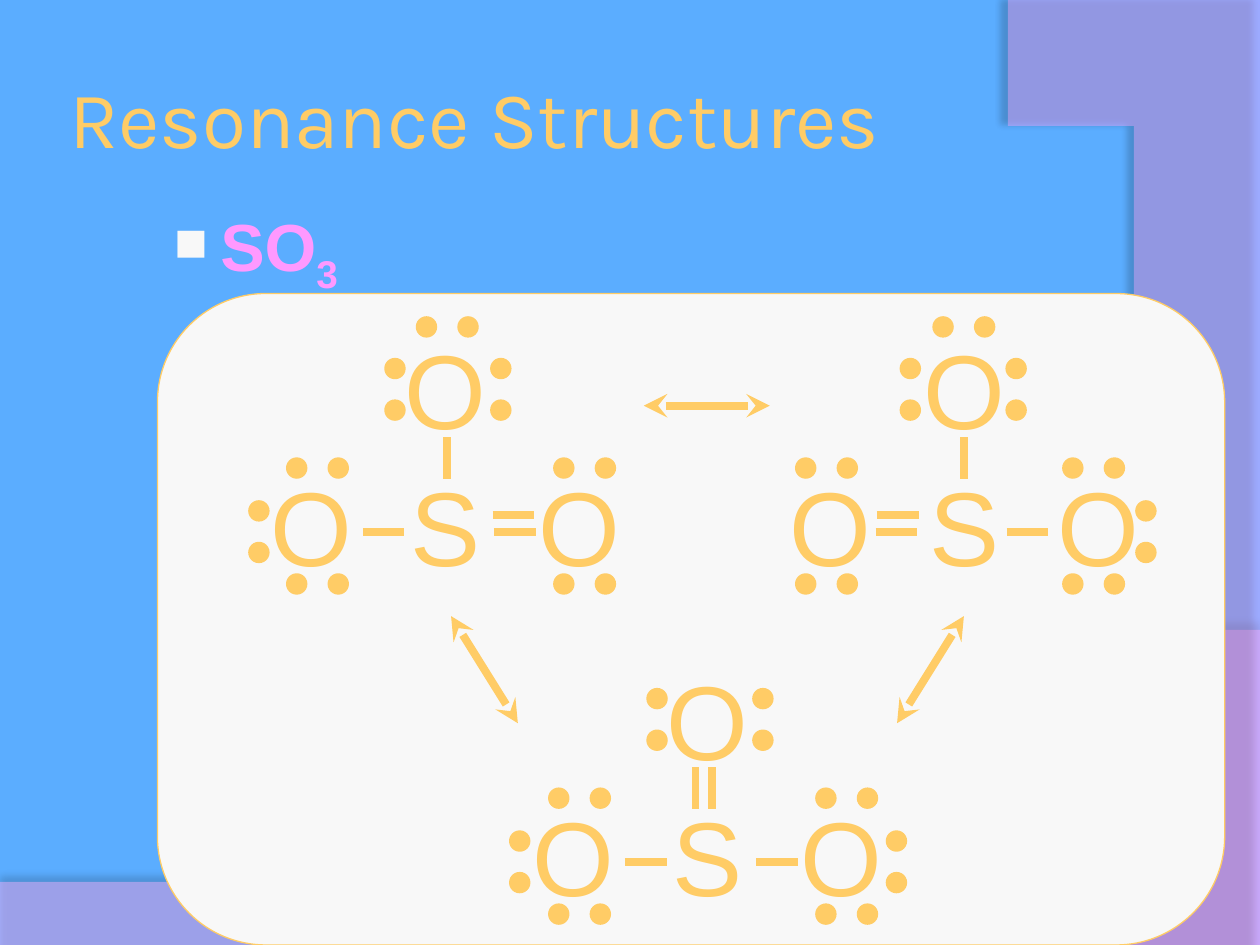
from lxml import etree
from pptx import Presentation
from pptx.dml.color import RGBColor
from pptx.enum.dml import MSO_FILL
from pptx.enum.shapes import MSO_CONNECTOR, MSO_SHAPE
from pptx.enum.text import MSO_ANCHOR, MSO_AUTO_SIZE, PP_ALIGN
from pptx.oxml.ns import qn
from pptx.util import Inches, Pt

LINE = MSO_CONNECTOR.STRAIGHT
DOT = MSO_SHAPE.OVAL
PANEL = MSO_SHAPE.FLOWCHART_ALTERNATE_PROCESS
COLORS = {"sky": "5BADFF", "gold": "FFCC66", "panel": "F8F8F8", "pink": "FF99FF",
          "wave": "FFB4FF", "arc": "FFA7FF", "shade": "000000"}
SIZE = 0.17   # dot diameter
GAP = 0.33    # step between paired dots, and bond length
SPAN = 3.54   # width over which a molecule is mirrored


def rgb(name):
    return RGBColor.from_string(COLORS[name])


def sub(node, tag, **attrs):
    return etree.SubElement(node, qn(tag), attrs)


def paint(shape, name):
    shape.shadow.inherit = False
    shape.fill.solid()
    shape.fill.fore_color.rgb = rgb(name)
    shape.line.fill.background()


def curve(a, b, c, d, steps=48):
    """Return points on a cubic Bezier curve, leaving out its start."""
    points = []
    for i in range(1, steps + 1):
        t = i / steps
        u = 1 - t
        points.append(tuple(u**3 * p + 3 * u * u * t * q + 3 * u * t * t * r + t**3 * s
                            for p, q, r, s in zip(a, b, c, d)))
    return points


def veil(slide, points, name, alpha, shade, dist, angle):
    """Draw a translucent outline with a soft shadow."""
    form = slide.shapes.build_freeform(*points[0], scale=Inches(1))
    form.add_line_segments(points[1:], close=True)
    shape = form.convert_to_shape()
    paint(shape, name)
    props = shape._element.spPr
    sub(props.find(".//" + qn("a:srgbClr")), "a:alpha", val=str(alpha * 1000))
    glow = sub(props.find(qn("a:effectLst")), "a:outerShdw", blurRad=str(Pt(4)),
               dist=str(Pt(dist)), dir=str(angle * 60000), algn="ctr", rotWithShape="0")
    tint = sub(glow, "a:srgbClr", val=COLORS["shade"])
    sub(tint, "a:alpha", val=str(shade * 1000))


def backdrop(slide):
    fill = slide.background.fill
    fill.solid()
    fill.fore_color.rgb = rgb("sky")
    wave = [(0, 7.05), (0, 7.51), (10, 7.51), (10, 5.2)]
    wave += curve((10, 5.2), (5.59, 7.29), (3.91, 7.19), (0, 7.05))
    veil(slide, wave, "wave", 45, 35, 3.5, 270)
    arc = [(10, 0.02), (10, 7.5), (8.21, 7.5)]
    arc += curve((8.21, 7.5), (9.35, 6.19), (10.18, 3), (8, 0))
    veil(slide, arc, "arc", 40, 45, 4, 180)


def label(shapes, box):
    frame = shapes.add_textbox(*map(Inches, box)).text_frame
    frame.word_wrap = True
    return frame


def style(para, face, size, name):
    para.font.name = face
    para.font.size = Pt(size)
    para.font.color.rgb = rgb(name)


def title(slide, box):
    frame = label(slide.shapes, box)
    frame.vertical_anchor = MSO_ANCHOR.MIDDLE
    frame.margin_left = frame.margin_right = Inches(0.05)
    para = frame.paragraphs[0]
    para.text = "Resonance Structures"
    style(para, "Karla", 46, "gold")


def formula(slide, box):
    para = label(slide.shapes, box).paragraphs[0]
    para.add_run().text = "SO"
    low = para.add_run()
    low.text = "3"
    low.font._element.set("baseline", "-25000")
    style(para, "Arial", 38, "pink")
    para.font.bold = True
    para.space_before = Pt(8)
    props = para._p.get_or_add_pPr()
    props.set("marL", str(Inches(0.37)))
    props.set("indent", str(-Inches(0.37)))
    mark = [etree.Element(qn("a:" + tag)) for tag in ("buClr", "buSzPct", "buChar")]
    sub(mark[0], "a:srgbClr", val=COLORS["panel"])
    mark[1].set("val", "70000")
    mark[2].set("char", "■")
    spot = list(props).index(props.find(qn("a:spcBef"))) + 1
    props[spot:spot] = mark


def stroke(shapes, start, end):
    line = shapes.add_connector(LINE, *map(Inches, (*start, *end)))
    line.line.color.rgb = rgb("gold")
    line.line.width = Pt(4.5)
    sub(line._element.spPr, "a:effectLst")
    return line


def arrow(shapes, start, end):
    edge = stroke(shapes, start, end).line._get_or_add_ln()
    for tag in ("a:headEnd", "a:tailEnd"):
        sub(edge, tag, type="stealth")


def panel(slide, box):
    shape = slide.shapes.add_shape(PANEL, *map(Inches, box))
    paint(shape, "panel")
    shape.line.color.rgb = rgb("gold")
    shape.line.width = Pt(0.75)


def molecule(slide, box, lone, flat, upright, crown=False, mirror=False):
    """Draw SO3: lone are x of outer dot pairs, flat and upright are bonds."""
    left, top = box[:2]
    shapes = slide.shapes.add_group_shape().shapes
    frame = label(shapes, box)
    frame.auto_size = MSO_AUTO_SIZE.SHAPE_TO_FIT_TEXT
    frame.text = "O\nO  S  O"
    for para in frame.paragraphs:
        style(para, "Arial", 60, "gold")
        para.alignment = PP_ALIGN.CENTER
        para.space_before = Pt(6)

    def place(x, width):
        return left + (SPAN - x - width if mirror else x)

    def pair(x, y, dx, dy):
        for i in range(2):
            dot = shapes.add_shape(DOT, *map(Inches, (x + i * dx, top + y + i * dy,
                                                      SIZE, SIZE)))
            paint(dot, "gold")

    for x in (1.28, 2.12):
        pair(place(x, SIZE), 0.31, 0, GAP)
    for x in lone:
        pair(left + x, 1.44, 0, GAP)
    rows = [(x, y) for x in (0.5, 2.62) for y in (1.1, 2.02)]
    for x, y in rows + [(1.53, -0.02)] * crown:
        pair(place(x, GAP + SIZE), y, GAP, 0)
    for x, y in flat:
        x = place(x, GAP)
        stroke(shapes, (x, top + y), (x + GAP, top + y))
    for x in upright:
        x = place(x, 0)
        stroke(shapes, (x, top + 1.27), (x, top + 0.94))


def main():
    deck = Presentation()
    deck.slide_width, deck.slide_height = Inches(10), Inches(7.5)
    slide = deck.slides.add_slide(deck.slide_layouts[6])
    backdrop(slide)
    title(slide, (0.5, 0.3, 8.17, 1.25))
    panel(slide, (1.25, 2.33, 8.47, 5.17))

    single = [(1.11, 1.69), (2.15, 1.69)]
    double = single + [(2.14, 1.56)]
    molecule(slide, (5.89, 2.53, 3.53, 2.2), [3.12], double, [1.78], True, True)
    molecule(slide, (1.77, 2.53, 3.53, 2.2), [0.2], double, [1.78], True)
    molecule(slide, (3.85, 5.15, 3.53, 2.2), [0.19, 3.18], single, [1.67, 1.8])

    arrow(slide.shapes, (5.11, 3.22), (6.11, 3.22))
    slant = slide.shapes.add_group_shape().shapes
    arrow(slant, (7.12, 5.74), (7.65, 4.89))
    arrow(slant, (4.11, 5.74), (3.58, 4.89))
    formula(slide, (1.28, 1.58, 8.5, 0.92))
    deck.save("out.pptx")


if __name__ == "__main__":
    main()
